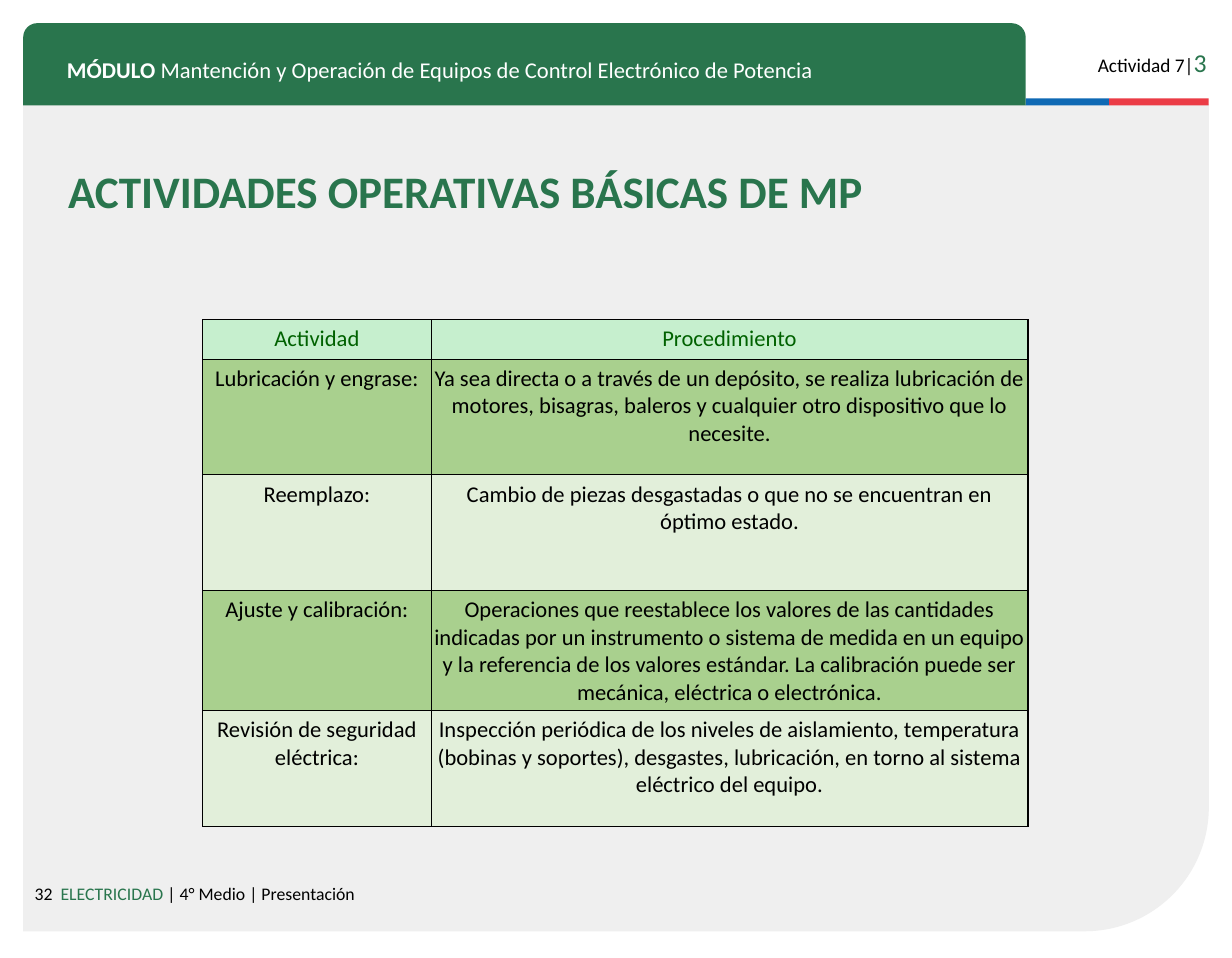
import pptx
import pptx.util
import pptx.dml.color
import pptx.enum.shapes
import pptx.enum.text
import pptx.oxml
import pptx.oxml.ns

SCALE = 9144
GREEN, BLACK, WHITE = "29754D", "000000", "FFFFFF"
KIND = pptx.enum.shapes.MSO_SHAPE
ALIGN = pptx.enum.text.PP_ALIGN
ANCHOR = pptx.enum.text.MSO_ANCHOR

ROWS = [
    ("Actividad", "Procedimiento"),
    ("Lubricación y engrase:",
     "Ya sea directa o a través de un depósito, se realiza lubricación de "
     "motores, bisagras, baleros y cualquier otro dispositivo que lo necesite."),
    ("Reemplazo:",
     "Cambio de piezas desgastadas o que no se encuentran en óptimo estado."),
    ("Ajuste y calibración:",
     "Operaciones que reestablece los valores de las cantidades indicadas por "
     "un instrumento o sistema de medida en un equipo y la referencia de los "
     "valores estándar. La calibración puede ser mecánica, eléctrica o "
     "electrónica."),
    ("Revisión de seguridad eléctrica:",
     "Inspección periódica de los niveles de aislamiento, temperatura (bobinas "
     "y soportes), desgastes, lubricación, en torno al sistema eléctrico del "
     "equipo."),
]


def px(count):
    return pptx.util.Emu(int(count * SCALE))


def paint(target, color):
    target.fill.solid()
    target.fill.fore_color.rgb = pptx.dml.color.RGBColor.from_string(color)


def block(slide, kind, box, color, rounds=()):
    shape = slide.shapes.add_shape(kind, *map(px, box))
    shape.shadow.inherit = False
    paint(shape, color)
    shape.line.fill.background()
    for index, value in enumerate(rounds):
        shape.adjustments[index] = value
    return shape


def write(frame, size, runs, align=ALIGN.LEFT):
    para = frame.paragraphs[0]
    para.alignment = align
    para.font.name = "Calibri"
    para.font.size = pptx.util.Pt(size)
    for text, color, bold in runs:
        run = para.add_run()
        run.text = text
        run.font.bold = bold
        run.font.color.rgb = pptx.dml.color.RGBColor.from_string(color)
    return para


def label(slide, box, size, runs, align=ALIGN.LEFT, anchor=ANCHOR.TOP):
    frame = slide.shapes.add_textbox(*map(px, box)).text_frame
    frame.word_wrap = True
    frame.vertical_anchor = anchor
    frame.margin_left = frame.margin_right = px(10)
    frame.margin_top = frame.margin_bottom = px(10)
    return write(frame, size, runs, align)


def edge(cell):
    props = cell._tc.get_or_add_tcPr()
    space = pptx.oxml.ns.nsdecls("a")
    for index, side in enumerate(("lnL", "lnR", "lnT", "lnB")):
        line = pptx.oxml.parse_xml(
            f'<a:{side} {space} w="9525"><a:solidFill>'
            f'<a:srgbClr val="{BLACK}"/></a:solidFill></a:{side}>')
        props.insert(index, line)


def grid(slide):
    frame = slide.shapes.add_table(len(ROWS), 2, *map(px, (175, 276, 712, 434)))
    table = frame.table
    table.first_row = table.horz_banding = False
    for col, width in zip(table.columns, (197, 515)):
        col.width = px(width)
    for index, texts in enumerate(ROWS):
        table.rows[index].height = px(100 if index else 34)
        fill = ("E2EFDA", "A9D08E")[index % 2] if index else "C6EFCE"
        color = BLACK if index else "006100"
        for cell, text in zip(table.rows[index].cells, texts):
            cell.margin_left = cell.margin_right = px(1)
            cell.margin_top = cell.margin_bottom = px(5)
            paint(cell, fill)
            edge(cell)
            write(cell.text_frame, 14, [(text, color, False)], ALIGN.CENTER)


def panel(slide, left, top, width, height):
    shift = (width - height) / 2
    box = (left + shift, top - shift, height, width)
    shape = block(slide, KIND.ROUND_1_RECTANGLE, box, "EFEFEF", [0.15])
    shape.rotation = 90


def main():
    deck = pptx.Presentation()
    deck.slide_width, deck.slide_height = px(1063), px(827)
    slide = deck.slides.add_slide(deck.slide_layouts[6])
    panel(slide, 20, 90, 1023, 714)
    block(slide, KIND.RECTANGLE, (885, 85, 72, 6), "0F69B4")
    block(slide, KIND.RECTANGLE, (957, 85, 86, 6), "EB3C46")
    block(slide, KIND.ROUND_2_SAME_RECTANGLE, (20, 20, 865, 71), GREEN, [0.17, 0])
    para = label(slide, (923, 30, 128, 38), 12,
                 [("Actividad 7|", BLACK, False), ("3", GREEN, False)],
                 ALIGN.RIGHT)
    para.runs[1].font.size = pptx.util.Pt(16)
    label(slide, (48, 38, 814, 35), 14, [
        ("MÓDULO", WHITE, True),
        (" Mantención y Operación de Equipos de Control Electrónico de Potencia",
         WHITE, False)])
    label(slide, (20, 753, 463, 29), 11, [
        ("32 ", BLACK, False), (" ELECTRICIDAD ", GREEN, False),
        ("| 4° Medio | Presentación", BLACK, False)])
    title = label(slide, (49, 151, 979, 35), 28,
                  [("ACTIVIDADES OPERATIVAS BÁSICAS DE MP", GREEN, True)],
                  anchor=ANCHOR.MIDDLE)
    title.line_spacing = 0.8
    grid(slide)
    deck.save("out.pptx")


if __name__ == "__main__":
    main()
